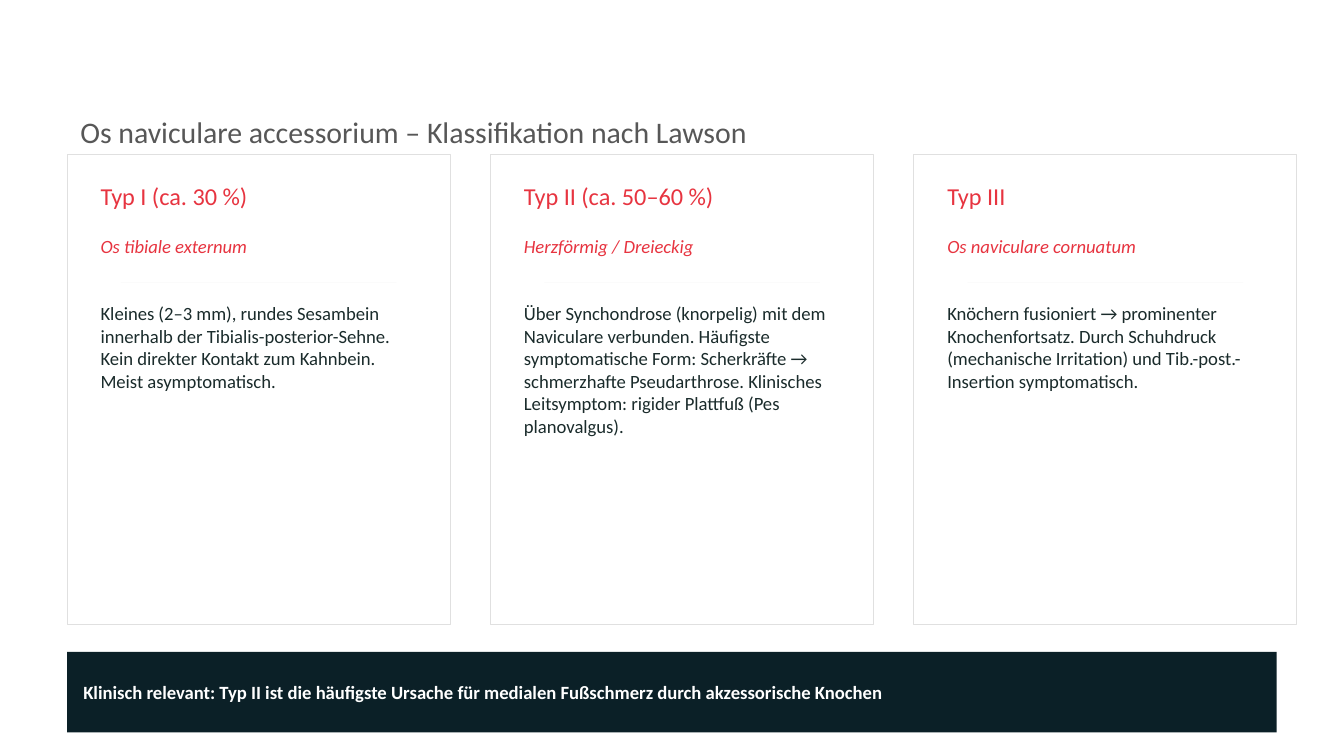
from pptx import Presentation
from pptx.dml.color import RGBColor
from pptx.enum.shapes import MSO_SHAPE
from pptx.enum.text import MSO_ANCHOR, MSO_AUTO_SIZE, PP_ALIGN
from pptx.util import Pt

RECTANGLE = MSO_SHAPE.RECTANGLE
MIDDLE = MSO_ANCHOR.MIDDLE
GROW = MSO_AUTO_SIZE.SHAPE_TO_FIT_TEXT
LEFT = PP_ALIGN.LEFT

FONT = "Calibri"
COLORS = {
    "white": "FFFFFF",
    "title": "575757",
    "accent": "E73440",
    "body": "1A2B2B",
    "border": "E0E0E0",
    "dark": "0B2027",
}


def add_rectangle(left, top, width, height, fill, line=None):
    shape = page.shapes.add_shape(RECTANGLE, Pt(left), Pt(top), Pt(width), Pt(height))
    shape.shadow.inherit = False
    shape.fill.solid()
    shape.fill.fore_color.rgb = RGBColor.from_string(COLORS[fill])
    if line:
        shape.line.color.rgb = RGBColor.from_string(COLORS[line])
        shape.line.width = Pt(0.5)
    else:
        shape.line.fill.background()
    return shape


def write(box, text, size, color, bold=False, italic=False):
    frame = box.text_frame
    frame.word_wrap = True
    frame.auto_size = GROW
    para = frame.paragraphs[0]
    para.alignment = LEFT
    span = para.add_run()
    span.text = text
    span.font.name = FONT
    span.font.size = Pt(size)
    span.font.bold = bold
    span.font.italic = italic
    span.font.color.rgb = RGBColor.from_string(COLORS[color])


deck = Presentation()
deck.slide_width, deck.slide_height = Pt(720), Pt(405)
page = deck.slides.add_slide(deck.slide_layouts[6])
page.background.fill.solid()
page.background.fill.fore_color.rgb = RGBColor.from_string(COLORS["white"])

# Title
title = page.shapes.add_textbox(Pt(36), Pt(57.6), Pt(648), Pt(36))
write(title, "Os naviculare accessorium – Klassifikation nach Lawson", 16, "title")

# Three type cards
MARGIN, CARD_WIDTH, GAP = 36, 205.2, 21.6
PADDING, RULE_INDENT = 10.8, 28.8
cards = [
    ("Typ I (ca. 30 %)", "Os tibiale externum",
     "Kleines (2–3 mm), rundes Sesambein innerhalb der Tibialis-posterior-Sehne. "
     "Kein direkter Kontakt zum Kahnbein. Meist asymptomatisch."),
    ("Typ II (ca. 50–60 %)", "Herzförmig / Dreieckig",
     "Über Synchondrose (knorpelig) mit dem Naviculare verbunden. Häufigste "
     "symptomatische Form: Scherkräfte → schmerzhafte Pseudarthrose. Klinisches "
     "Leitsymptom: rigider Plattfuß (Pes planovalgus)."),
    ("Typ III", "Os naviculare cornuatum",
     "Knöchern fusioniert → prominenter Knochenfortsatz. Durch Schuhdruck "
     "(mechanische Irritation) und Tib.-post.-Insertion symptomatisch."),
]
for index, (heading, subtitle, description) in enumerate(cards):
    left = MARGIN + index * (CARD_WIDTH + GAP)
    add_rectangle(left, 82.8, CARD_WIDTH, 252, "white", "border")
    add_rectangle(left + RULE_INDENT, 151.2, CARD_WIDTH - 2 * RULE_INDENT, 0, "border")
    for text, top, height, size, color, italic in [
        (heading, 93.6, 28.8, 13, "accent", False),
        (subtitle, 122.4, 21.6, 10, "accent", True),
        (description, 158.4, 165.6, 10, "body", False),
    ]:
        box = page.shapes.add_textbox(
            Pt(left + PADDING), Pt(top), Pt(CARD_WIDTH - 2 * PADDING), Pt(height))
        write(box, text, size, color, italic=italic)

# Clinical takeaway bar
bar = add_rectangle(MARGIN, 349.2, 648, 43.2, "dark")
write(bar, "Klinisch relevant: Typ II ist die häufigste Ursache für medialen "
      "Fußschmerz durch akzessorische Knochen", 10, "white", bold=True)
frame = bar.text_frame
frame.vertical_anchor = MIDDLE
frame.margin_left = frame.margin_right = Pt(8.64)
frame.margin_top = frame.margin_bottom = Pt(2.88)

deck.save("out.pptx")
